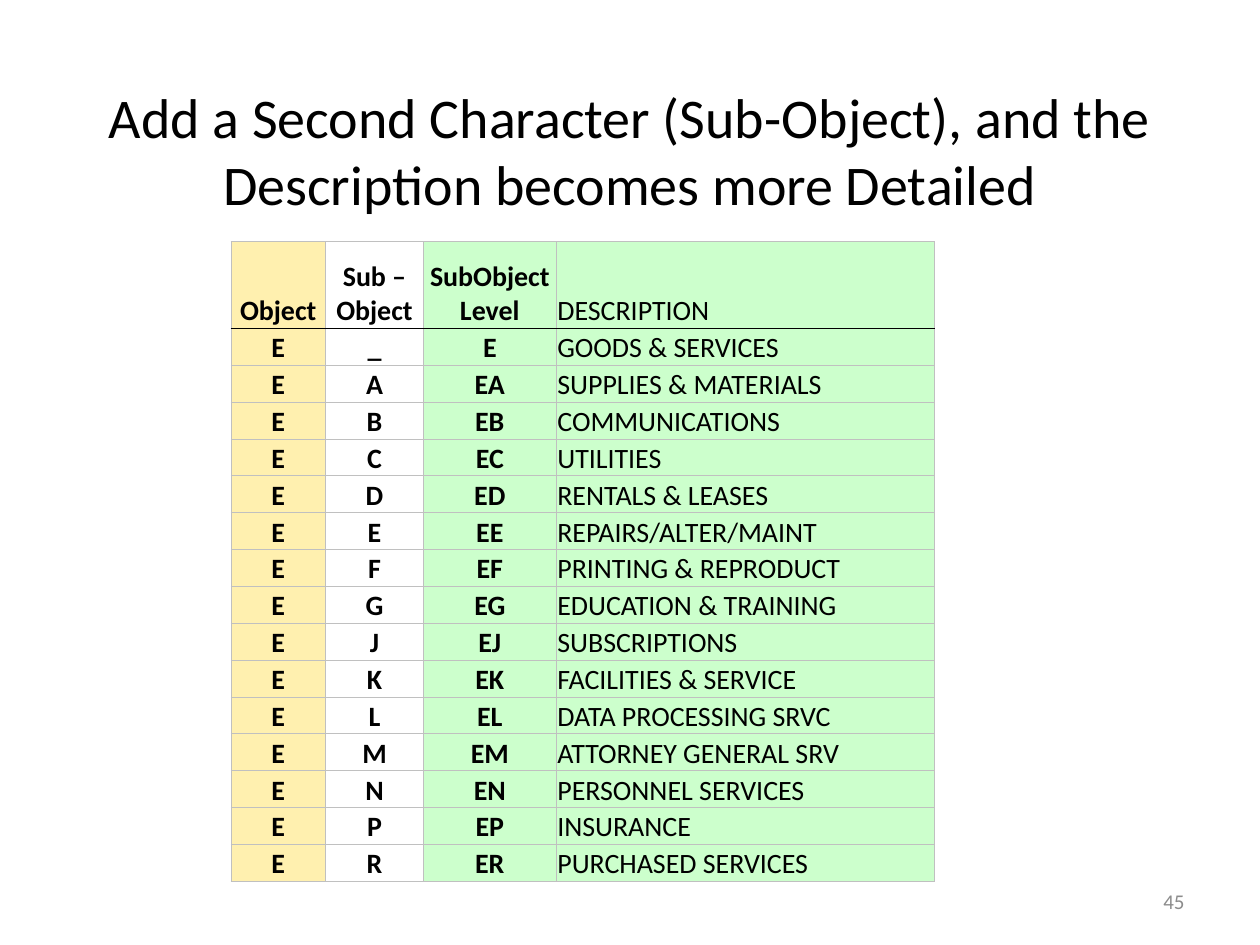
"""Build the slide listing sub-object codes and their descriptions."""
from dataclasses import dataclass

from lxml import etree
from pptx import Presentation
from pptx.dml.color import RGBColor
from pptx.enum.text import MSO_ANCHOR, PP_ALIGN
from pptx.oxml.ns import qn
from pptx.util import Pt

LEFT, CENTER, RIGHT = PP_ALIGN.LEFT, PP_ALIGN.CENTER, PP_ALIGN.RIGHT
MIDDLE, BOTTOM = MSO_ANCHOR.MIDDLE, MSO_ANCHOR.BOTTOM
BLACK = RGBColor(0x00, 0x00, 0x00)
GRAY = RGBColor(0x8C, 0x8C, 0x8C)
SILVER = RGBColor(0xC0, 0xC0, 0xC0)
YELLOW = RGBColor(0xFF, 0xF0, 0xAF)
GREEN = RGBColor(0xCC, 0xFF, 0xCC)
FONT = "Calibri"
TITLE_ONLY = 5
HEADER_HEIGHT, ROW_HEIGHT = Pt(49.7), Pt(21.07)
CELL_FORMAT = {
    "margin_left": Pt(0.72),
    "margin_right": Pt(0.72),
    "margin_top": Pt(0.72),
    "margin_bottom": Pt(0),
    "vertical_anchor": BOTTOM,
}


@dataclass(frozen=True)
class Column:
    heading: str
    width: float
    fill: RGBColor | None
    align: PP_ALIGN = CENTER
    bold: bool = True


COLUMNS = [
    Column("Object", 54, YELLOW),
    Column("Sub –Object", 56, None),
    Column("SubObject Level", 75.8, GREEN),
    Column("DESCRIPTION", 216, GREEN, LEFT, False),
]
OBJECT = "E"
DESCRIPTIONS = {
    "_": "GOODS & SERVICES",
    "A": "SUPPLIES & MATERIALS",
    "B": "COMMUNICATIONS",
    "C": "UTILITIES",
    "D": "RENTALS & LEASES",
    "E": "REPAIRS/ALTER/MAINT",
    "F": "PRINTING & REPRODUCT",
    "G": "EDUCATION & TRAINING",
    "J": "SUBSCRIPTIONS",
    "K": "FACILITIES & SERVICE",
    "L": "DATA PROCESSING SRVC",
    "M": "ATTORNEY GENERAL SRV",
    "N": "PERSONNEL SERVICES",
    "P": "INSURANCE",
    "R": "PURCHASED SERVICES",
}


def write_text(frame, text: str, size: float, color: RGBColor,
               align: PP_ALIGN, bold: bool = False) -> None:
    para = frame.paragraphs[0]
    para.alignment = align
    span = para.add_run()
    span.text = text
    span.font.color.rgb = color
    for name, value in {"name": FONT, "size": Pt(size), "bold": bold}.items():
        setattr(span.font, name, value)


def place(box, left: float, top: float, width: float, height: float) -> None:
    lengths = {"left": left, "top": top, "width": width, "height": height}
    for name, value in lengths.items():
        setattr(box, name, Pt(value))


def add_border(cell, side: str, color: RGBColor) -> None:
    properties = cell._tc.get_or_add_tcPr()
    line = etree.SubElement(properties, qn(f"a:ln{side}"), w=str(Pt(0.5)))
    fill = etree.SubElement(line, qn("a:solidFill"))
    etree.SubElement(fill, qn("a:srgbClr"), val=str(color))


def format_cell(cell, text: str, column: Column, row: int) -> None:
    for name, value in CELL_FORMAT.items():
        setattr(cell, name, value)
    write_text(cell.text_frame, text, 16, BLACK, column.align, column.bold)
    rule_side = {0: "B", 1: "T"}.get(row)
    for side in "LRTB":
        add_border(cell, side, BLACK if side == rule_side else SILVER)
    if column.fill is None:
        cell.fill.background()
    else:
        cell.fill.solid()
        cell.fill.fore_color.rgb = column.fill


def add_code_table(page) -> None:
    rows = [[column.heading for column in COLUMNS]]
    for code, description in DESCRIPTIONS.items():
        rows.append([OBJECT, code, OBJECT + code.strip("_"), description])
    width = Pt(sum(column.width for column in COLUMNS))
    height = HEADER_HEIGHT + ROW_HEIGHT * len(DESCRIPTIONS)
    table = page.shapes.add_table(
        len(rows), len(COLUMNS), Pt(132), Pt(138), width, height).table
    table.first_row = table.horz_banding = False
    for index, column in enumerate(COLUMNS):
        table.columns[index].width = Pt(column.width)
    for row, texts in enumerate(rows):
        table.rows[row].height = ROW_HEIGHT if row else HEADER_HEIGHT
        for index, (text, column) in enumerate(zip(texts, COLUMNS)):
            format_cell(table.cell(row, index), text, column, row)


def main() -> None:
    deck = Presentation()
    deck.slide_width, deck.slide_height = Pt(720), Pt(540)
    page = deck.slides.add_slide(deck.slide_layouts[TITLE_ONLY])

    title = page.shapes.title
    place(title, 36, 21.6, 648, 128)
    title.text_frame.vertical_anchor = MIDDLE
    write_text(title.text_frame,
               "Add a Second Character (Sub-Object), and the "
               "Description becomes more Detailed", 32, BLACK, CENTER)

    add_code_table(page)

    number = page.shapes.add_textbox(Pt(516), Pt(500.5), Pt(168), Pt(28.75))
    number.text_frame.word_wrap = True
    number.text_frame.vertical_anchor = MIDDLE
    write_text(number.text_frame, "45", 12, GRAY, RIGHT)

    deck.save("out.pptx")


if __name__ == "__main__":
    main()
